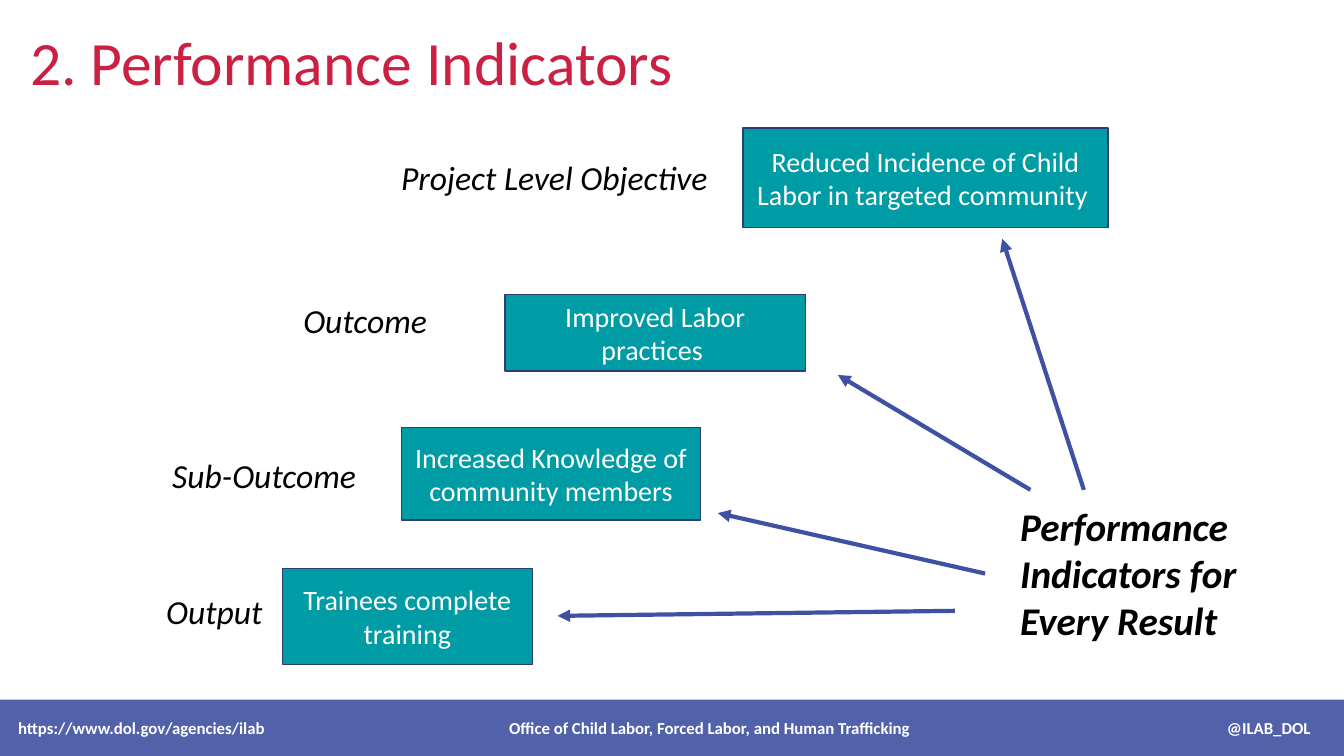
from lxml.etree import SubElement
from pptx import Presentation
from pptx.dml.color import RGBColor
from pptx.enum.shapes import MSO_CONNECTOR as Connector, MSO_SHAPE as Shape
from pptx.enum.text import MSO_ANCHOR as Anchor, PP_ALIGN as Align
from pptx.oxml.ns import qn
from pptx.util import Inches, Pt

FONT = "Calibri"
RED, TEAL, NAVY, BLUE = "CB2042", "009CA6", "2F3C78", "3F51A2"
BLACK, WHITE = "000000", "FFFFFF"


def rgb(color):
    return RGBColor.from_string(color)


def write(shape, lines, size, color, bold=False, italic=False,
          align=Align.LEFT, anchor=Anchor.TOP, wrap=True):
    """Fill a shape with one single-run paragraph per line."""
    frame = shape.text_frame
    frame.word_wrap = wrap
    frame.vertical_anchor = anchor
    for index, line in enumerate(lines):
        paragraph = frame.paragraphs[0] if index == 0 else frame.add_paragraph()
        paragraph.alignment = align
        run = paragraph.add_run()
        run.text = line
        run.font.name = FONT
        run.font.size = Pt(size)
        run.font.bold = bold
        run.font.italic = italic
        run.font.color.rgb = rgb(color)


prs = Presentation()
prs.slide_width, prs.slide_height = Inches(13.33), Inches(7.5)
slide = prs.slides.add_slide(prs.slide_layouts[6])
shapes = slide.shapes

title = shapes.add_textbox(Inches(0.2), Inches(0.27), Inches(11.5), Inches(1.45))
write(title, ["2. Performance Indicators"], 44, RED)
title.text_frame.paragraphs[0].line_spacing = 0.9

# Each level: label, its left, top and width; result, its left, top, width and height
levels = [
    ("Project Level Objective", (3.88, 1.51, 3.34),
     "Reduced Incidence of Child Labor in targeted community ", (7.37, 1.27, 3.62, 0.99)),
    ("Outcome", (2.91, 2.93, 2.44),
     "Improved Labor practices ", (5.01, 2.92, 2.98, 0.76)),
    ("Sub-Outcome", (1.61, 4.46, 2.05),
     "Increased Knowledge of community members", (3.98, 4.24, 2.97, 0.92)),
    ("Output", (1.55, 5.81, 1.74),
     "Trainees complete training", (2.8, 5.64, 2.48, 0.95)),
]
for level, level_place, result, result_place in levels:
    label = shapes.add_textbox(*map(Inches, level_place), Inches(0.5))
    write(label, [level], 24, BLACK, italic=True)

    result_box = shapes.add_shape(Shape.RECTANGLE, *map(Inches, result_place))
    result_box.shadow.inherit = False
    result_box.fill.solid()
    result_box.fill.fore_color.rgb = rgb(TEAL)
    result_box.line.color.rgb = rgb(NAVY)
    result_box.line.width = Pt(1)
    write(result_box, [result], 20, WHITE, align=Align.CENTER, anchor=Anchor.MIDDLE)

message = shapes.add_textbox(Inches(10.02), Inches(4.93), Inches(2.37), Inches(1.51))
write(message, ["Performance", "Indicators for", "Every Result"], 28, BLACK,
      bold=True, italic=True, wrap=False)

# Arrows from the message to each result: start x, y and end x, y
arrows = [
    (9.77, 5.69, 7.12, 5.09),
    (10.22, 4.86, 8.31, 3.72),
    (10.75, 4.86, 9.94, 2.37),
    (9.47, 6.06, 5.53, 6.11),
]
for ends in arrows:
    arrow = shapes.add_connector(Connector.STRAIGHT, *map(Inches, ends))
    arrow.line.color.rgb = rgb(BLUE)
    arrow.line.width = Pt(3)
    SubElement(arrow.line._get_or_add_ln(), qn("a:tailEnd"), type="triangle")
    SubElement(arrow._element.spPr, qn("a:effectLst"))

footer = shapes.add_shape(Shape.RECTANGLE, Inches(-0.04), Inches(6.94),
                          Inches(13.37), Inches(0.56))
footer.shadow.inherit = False
footer.fill.solid()
footer.fill.fore_color.rgb = rgb(BLUE)
footer_color = footer._element.spPr.find(qn("a:solidFill")).find(qn("a:srgbClr"))
SubElement(footer_color, qn("a:alpha"), val="90000")
footer.line.fill.background()
footer.text_frame.margin_left = Inches(0.22)
write(footer, ["https://www.dol.gov/agencies/ilab"
               "\tOffice of Child Labor, Forced Labor, and Human Trafficking"
               "\t@ILAB_DOL"], 12, WHITE, bold=True, anchor=Anchor.MIDDLE)
tab_stops = SubElement(footer.text_frame.paragraphs[0]._p.get_or_add_pPr(), qn("a:tabLst"))
for position, side in [(6.86, "ctr"), (12.82, "r")]:
    SubElement(tab_stops, qn("a:tab"), pos=str(Inches(position)), algn=side)

prs.save("out.pptx")
